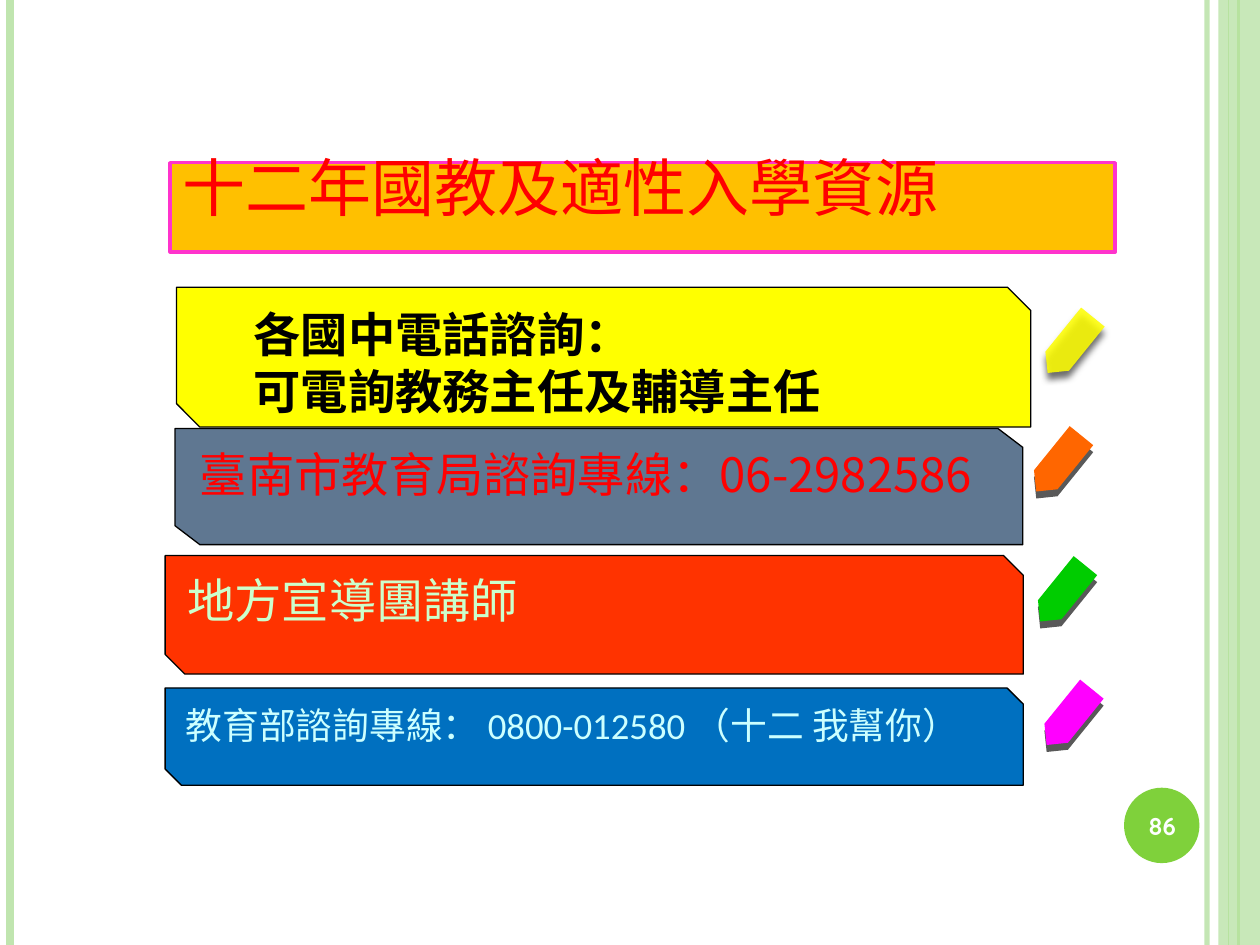
from lxml import etree
from pptx import Presentation
from pptx import util as u
from pptx.dml.color import RGBColor
from pptx.enum import shapes, text
from pptx.oxml.ns import qn

C = {"pale": "C0E5AF", "green": "7FD13B", "amber": "FFC000", "pink": "FF33CC",
     "red": "FF0000", "blue": "0070C0", "ice": "CCFFFF", "scarlet": "FF3300",
     "mint": "CCFFCC", "yellow": "FFFF00", "black": "000000", "slate": "5F7791",
     "orange": "FF6600", "leaf": "00CC00", "magenta": "FF00FF",
     "shade": "595959", "white": "FEFFFF"}
C = {k: RGBColor.from_string(v) for k, v in C.items()}
CJK = "Noto Sans CJK SC"


def style(r, font, size, color, bold=False):
    r.font.name, r.font.size, r.font.bold = font, u.Pt(size), bold
    r.font.color.rgb = C[color]
    etree.SubElement(r.font._element, qn("a:ea")).set("typeface", CJK)


def opacity(sp, pct):
    clr = sp._element.spPr.find(".//" + qn("a:srgbClr"))
    etree.SubElement(clr, qn("a:alpha")).set("val", str(pct * 1000))


prs = Presentation()
prs.slide_width, prs.slide_height = u.Cm(25.4), u.Cm(19.05)
s = prs.slides.add_slide(prs.slide_layouts[5])

for x, color, width, pct in [(24.33, "pale", 3, 93), (0.2, "pale", 4.5, 100),
                             (24.97, "green", 1.5, 100), (24.77, "green", 0.75, 100)]:
    cx = s.shapes.add_connector(shapes.MSO_CONNECTOR.STRAIGHT,
                                u.Cm(x), 0, u.Cm(x), prs.slide_height)
    cx.line.color.rgb, cx.line.width = C[color], u.Pt(width)
    etree.SubElement(cx._element.spPr, qn("a:effectLst"))
    if pct < 100:
        opacity(cx, pct)

for kind, x, y, w, h, color, pct in [("RECTANGLE", 24.56, 0, 0.84, 19.05, "pale", 87),
                                     ("OVAL", 22.66, 15.88, 1.52, 1.52, "green", 100)]:
    sp = s.shapes.add_shape(shapes.MSO_SHAPE[kind], u.Cm(x), u.Cm(y), u.Cm(w), u.Cm(h))
    sp.shadow.inherit = False
    sp.line.fill.background()
    sp.fill.solid()
    sp.fill.fore_color.rgb = C[color]
    if pct < 100:
        opacity(sp, pct)

sp = s.shapes.title
sp.left, sp.top, sp.width, sp.height = u.Cm(3.43), u.Cm(3.28), u.Cm(19.05), u.Cm(1.8)
sp.fill.solid()
sp.fill.fore_color.rgb = C["amber"]
sp.line.color.rgb, sp.line.width = C["pink"], u.Pt(2)
tf = sp.text_frame
tf.text = "十二年國教及適性入學資源"
tf.auto_size, tf.vertical_anchor = text.MSO_AUTO_SIZE.NONE, text.MSO_ANCHOR.MIDDLE
p = tf.paragraphs[0]
p.alignment, p.line_spacing = text.PP_ALIGN.LEFT, u.Pt(19.5)
style(p.runs[0], CJK, 36, "red")

bars = [
    (3.56, 5.79, 17.22, 2.82, "yellow", "black", 27, True, 1.07,
     [[("各國中電話諮詢：", CJK)], [("可電詢教務主任及輔導主任", CJK)]]),
    (3.53, 8.64, 17.09, 2.34, "slate", "red", 27, False, 0,
     [[("臺南市教育局諮詢專線：06-2982586", CJK)]]),
    (3.33, 11.2, 17.3, 2.39, "scarlet", "mint", 27, False, 0,
     [[("地方宣導團講師", CJK)]]),
    (3.33, 13.87, 17.3, 1.96, "blue", "ice", 21, False, 0,
     [[("教育部諮詢專線： ", CJK), ("0800-012580 （十二 我幫你）", "Calibri")]]),
]
for x, y, w, h, fill, color, size, bold, indent, paras in bars:
    if fill == "slate":
        fb = s.shapes.build_freeform(u.Cm(x), u.Cm(y))
        fb.add_line_segments([(u.Cm(x + dx), u.Cm(y + dy)) for dx, dy in
                              [(w - 0.5, 0), (w, 0.38), (w, h), (0.5, h), (0, h - 0.38)]])
        sp = fb.convert_to_shape()
        sp.text_frame.margin_left, sp.text_frame.margin_top = u.Cm(0.5), u.Cm(0.33)
    else:
        sp = s.shapes.add_shape(shapes.MSO_SHAPE.SNIP_2_DIAG_RECTANGLE,
                                u.Cm(x), u.Cm(y), u.Cm(w), u.Cm(h))
    sp.shadow.inherit = False
    sp.fill.solid()
    sp.fill.fore_color.rgb = C[fill]
    sp.line.color.rgb, sp.line.width = C["black"], u.Pt(0.75)
    tf = sp.text_frame
    tf.word_wrap, tf.vertical_anchor = True, text.MSO_ANCHOR.TOP
    for i, runs in enumerate(paras):
        p = tf.add_paragraph() if i else tf.paragraphs[0]
        p.alignment = text.PP_ALIGN.LEFT
        if indent:
            p._p.get_or_add_pPr().set("marL", str(u.Cm(indent)))
        for words, font in runs:
            r = p.add_run()
            r.text = words
            style(r, font, size, color, bold)

for x, y, color, pct, blur in [(20.85, 6.65, "yellow", 86, 4), (20.62, 9.04, "orange", 100, 0),
                               (20.7, 11.66, "leaf", 100, 0), (20.83, 14.15, "magenta", 100, 0)]:
    sp = s.shapes.add_shape(shapes.MSO_SHAPE.PENTAGON, u.Cm(x), u.Cm(y), u.Cm(1.45), u.Cm(0.61))
    sp.rotation = 129
    sp.line.fill.background()
    sp.fill.solid()
    sp.fill.fore_color.rgb = C[color]
    if pct < 100:
        opacity(sp, pct)
    sp.shadow.inherit = False
    sh = etree.SubElement(sp._element.spPr.find(qn("a:effectLst")), qn("a:outerShdw"),
                          blurRad=str(u.Pt(blur)), dist=str(u.Pt(4)), dir="5400000",
                          rotWithShape="0")
    etree.SubElement(sh, qn("a:srgbClr")).set("val", str(C["shade"]))

sp = s.shapes.add_textbox(u.Cm(22.58), u.Cm(15.93), u.Cm(1.7), u.Cm(1.45))
tf = sp.text_frame
tf.text = "86"
tf.word_wrap, tf.vertical_anchor = True, text.MSO_ANCHOR.MIDDLE
p = tf.paragraphs[0]
p.alignment = text.PP_ALIGN.CENTER
style(p.runs[0], "Quicksand", 14, "white", True)

prs.save("out.pptx")
